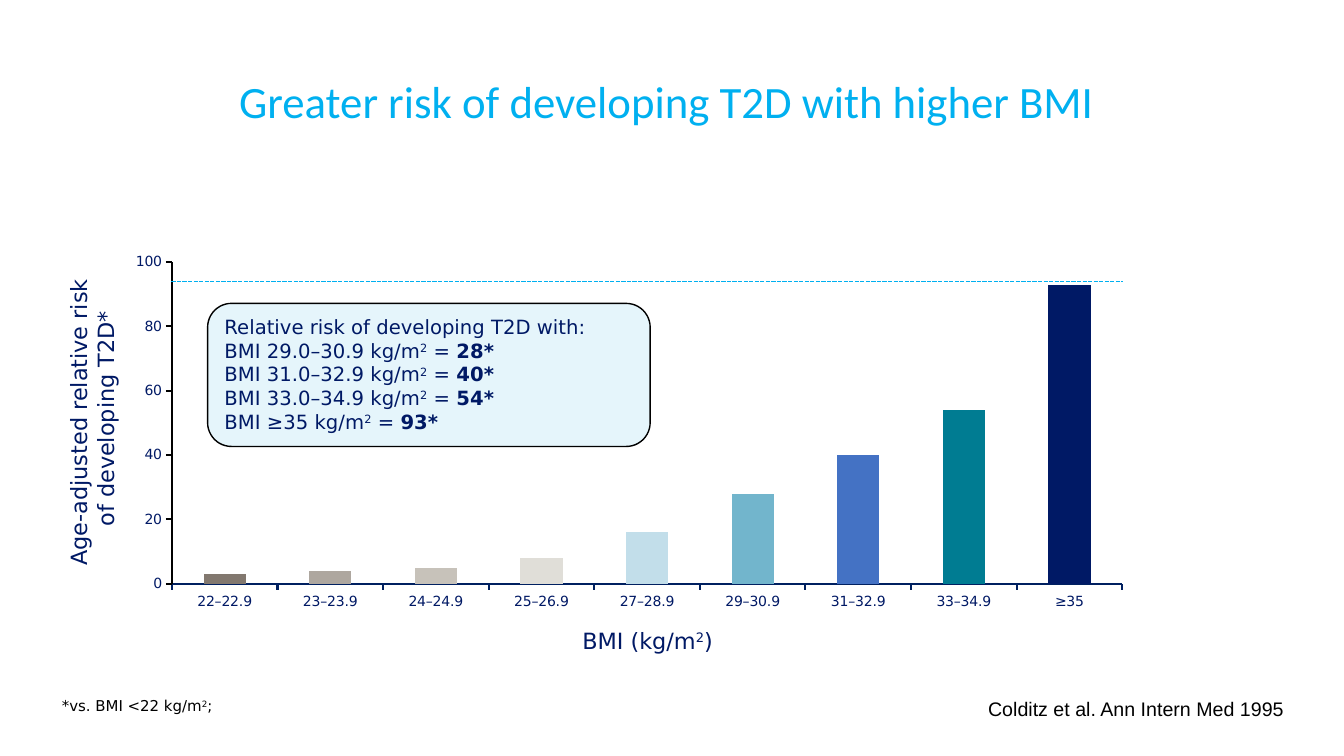
from lxml.etree import SubElement
from pptx import Presentation
from pptx.chart.data import CategoryChartData
from pptx.dml.color import RGBColor
from pptx.enum.chart import XL_CHART_TYPE as ChartType, XL_TICK_MARK as Tick
from pptx.enum.dml import MSO_LINE_DASH_STYLE as Dash
from pptx.enum.shapes import MSO_CONNECTOR as Connector, MSO_SHAPE as Shape
from pptx.enum.text import MSO_ANCHOR as Anchor, MSO_AUTO_SIZE as AutoSize, PP_ALIGN as Align
from pptx.oxml import parse_xml
from pptx.oxml.ns import nsdecls, qn
from pptx.util import Pt

COLORS = {
    "title": "00B0F0", "navy": "001965", "category_axis": "002060",
    "black": "000000", "callout": "009FDA", "series": "4472C4",
}
FONT = "DejaVu Sans"
RISK_BY_BMI = [
    ("22–22.9", 3, "82786F"),
    ("23–23.9", 4, "AEA79F"),
    ("24–24.9", 5, "C7C2BA"),
    ("25–26.9", 8, "E0DED8"),
    ("27–28.9", 16, "C2DEEA"),
    ("29–30.9", 28, "72B5CC"),
    ("31–32.9", 40, "4472C4"),
    ("33–34.9", 54, "007C92"),
    ("≥35", 93, "001965"),
]
SQUARED = ("2", "sup")


def rgb(name):
    return RGBColor.from_string(COLORS.get(name, name))


def points(*lengths):
    return [Pt(length) for length in lengths]


def paint(fill, color):
    fill.solid()
    fill.fore_color.rgb = rgb(color)


def style_line(line, color, width):
    line.color.rgb = rgb(color)
    line.width = Pt(width)


def style_font(font, size, color, name=FONT):
    font.size = Pt(size)
    font.name = name
    font.color.rgb = rgb(color)


def write(frame, *paragraphs, size=14, color="navy", font=FONT, align=Align.LEFT,
          anchor=Anchor.BOTTOM, insets=(7.2, 3.6), wrap=False, grow=True, spacing=None):
    frame.word_wrap = wrap
    frame.auto_size = AutoSize.SHAPE_TO_FIT_TEXT if grow else AutoSize.NONE
    frame.vertical_anchor = anchor
    frame.margin_left = frame.margin_right = Pt(insets[0])
    frame.margin_top = frame.margin_bottom = Pt(insets[1])
    for index, parts in enumerate(paragraphs):
        paragraph = frame.add_paragraph() if index else frame.paragraphs[0]
        paragraph.alignment = align
        paragraph.line_spacing = spacing
        for part in parts:
            words, emphasis = part if isinstance(part, tuple) else (part, None)
            for line_index, line in enumerate(words.split("\n")):
                if line_index:
                    paragraph.add_line_break()
                if not line:
                    continue
                run = paragraph.add_run()
                run.text = line
                style_font(run.font, size, color, font)
                if emphasis == "bold":
                    run.font.bold = True
                elif emphasis == "sup":
                    run._r.get_or_add_rPr().set("baseline", "30000")


def add_label(slide, box, *paragraphs, rotation=0, **text_format):
    label = slide.shapes.add_textbox(*points(*box))
    label.rotation = rotation
    write(label.text_frame, *paragraphs, **text_format)


def style_axis(axis, color, width=1.5):
    axis.has_major_gridlines = False
    axis.major_tick_mark = Tick.OUTSIDE
    axis.minor_tick_mark = Tick.NONE
    style_font(axis.tick_labels.font, 10, "navy")
    style_line(axis.format.line, color, width)


def set_plot_area(chart, left, top, width, height):
    plot_area = chart._chartSpace.chart.plotArea
    for layout in plot_area.findall(qn("c:layout")):
        plot_area.remove(layout)
    sizes = "".join(f'<c:{tag} val="{value}"/>' for tag, value in
                    zip("xywh", (left, top, width, height)))
    plot_area.insert(0, parse_xml(
        f'<c:layout {nsdecls("c")}><c:manualLayout><c:layoutTarget val="inner"/>'
        f'<c:xMode val="edge"/><c:yMode val="edge"/>{sizes}</c:manualLayout></c:layout>'))


def add_risk_chart(slide, box):
    categories, risks, bar_colors = zip(*RISK_BY_BMI)
    data = CategoryChartData()
    data.categories = categories
    data.add_series("Series 1", risks)
    chart = slide.shapes.add_chart(ChartType.COLUMN_CLUSTERED, *points(*box), data).chart
    chart.has_legend = False
    chart.has_title = False
    style_font(chart.font, 11.6, "category_axis")
    style_axis(chart.category_axis, "category_axis")
    style_axis(chart.value_axis, "black")
    chart.value_axis.minimum_scale = 0
    chart.value_axis.maximum_scale = 100
    chart.value_axis.major_unit = 20
    bars = chart.plots[0]
    bars.gap_width = 150
    bars.vary_by_categories = False
    risk_series = bars.series[0]
    paint(risk_series.format.fill, "series")
    for index, color in enumerate(bar_colors):
        paint(risk_series.points[index].format.fill, color)
    set_plot_area(chart, 0.071, 0.04, 0.898, 0.849)


def add_callout(slide, box, *paragraphs):
    callout = slide.shapes.add_shape(Shape.ROUNDED_RECTANGLE, *points(*box))
    callout.shadow.inherit = False
    paint(callout.fill, "callout")
    tint = callout._element.spPr.find(qn("a:solidFill"))[0]
    SubElement(tint, qn("a:alpha")).set("val", "10000")
    style_line(callout.line, "black", 1)
    write(callout.text_frame, *paragraphs, anchor=Anchor.TOP, wrap=True)


def add_reference_line(slide, left, right, height):
    reference = slide.shapes.add_connector(
        Connector.STRAIGHT, *points(left, height, right, height))
    style_line(reference.line, "title", 1)
    reference.line.dash_style = Dash.SQUARE_DOT
    SubElement(reference._element.spPr, qn("a:effectLst"))


def risk_line(bmi, risk):
    return [f"BMI {bmi} kg/m", SQUARED, " = ", (risk, "bold")]


def main():
    deck = Presentation()
    deck.slide_width, deck.slide_height = points(960, 540)
    slide = deck.slides.add_slide(deck.slide_layouts[6])

    add_label(slide, (696.2, 492.5, 235.4, 26.6), ["Colditz et al. Ann Intern Med 1995"],
              color="black", font="Arial", insets=(9.6, 4.8))
    add_label(slide, (34.6, 492.5, 134.6, 23), ["*vs. BMI <22 kg/m", SQUARED, ";"],
              size=10.7, color="black", insets=(9.6, 4.8))
    add_risk_chart(slide, (69.1, 176.4, 756, 270.7))
    add_label(slide, (33.1, 54, 893.5, 41), ["Greater risk of developing T2D with higher BMI "],
              size=32, color="title", font="Calibri", align=Align.CENTER,
              anchor=Anchor.MIDDLE, wrap=True, grow=False, spacing=0.9)
    add_callout(slide, (148.3, 216.7, 316.1, 102.2),
                ["Relative risk of developing T2D with:\n", *risk_line("29.0–30.9", "28*"),
                 "\n", *risk_line("31.0–32.9", "40*")],
                risk_line("33.0–34.9", "54*"),
                risk_line("≥35", "93*"))
    add_reference_line(slide, 122.4, 802.1, 200.9)
    add_label(slide, (404.6, 444.2, 115.9, 26.6), ["BMI (kg/m", SQUARED, ")"],
              size=16, align=Align.CENTER)
    add_label(slide, (-46.8, 278.6, 223.9, 46.1),
              ["Age-adjusted relative risk\n of developing T2D*"],
              rotation=270, size=16, align=Align.CENTER)

    deck.save("out.pptx")


if __name__ == "__main__":
    main()
